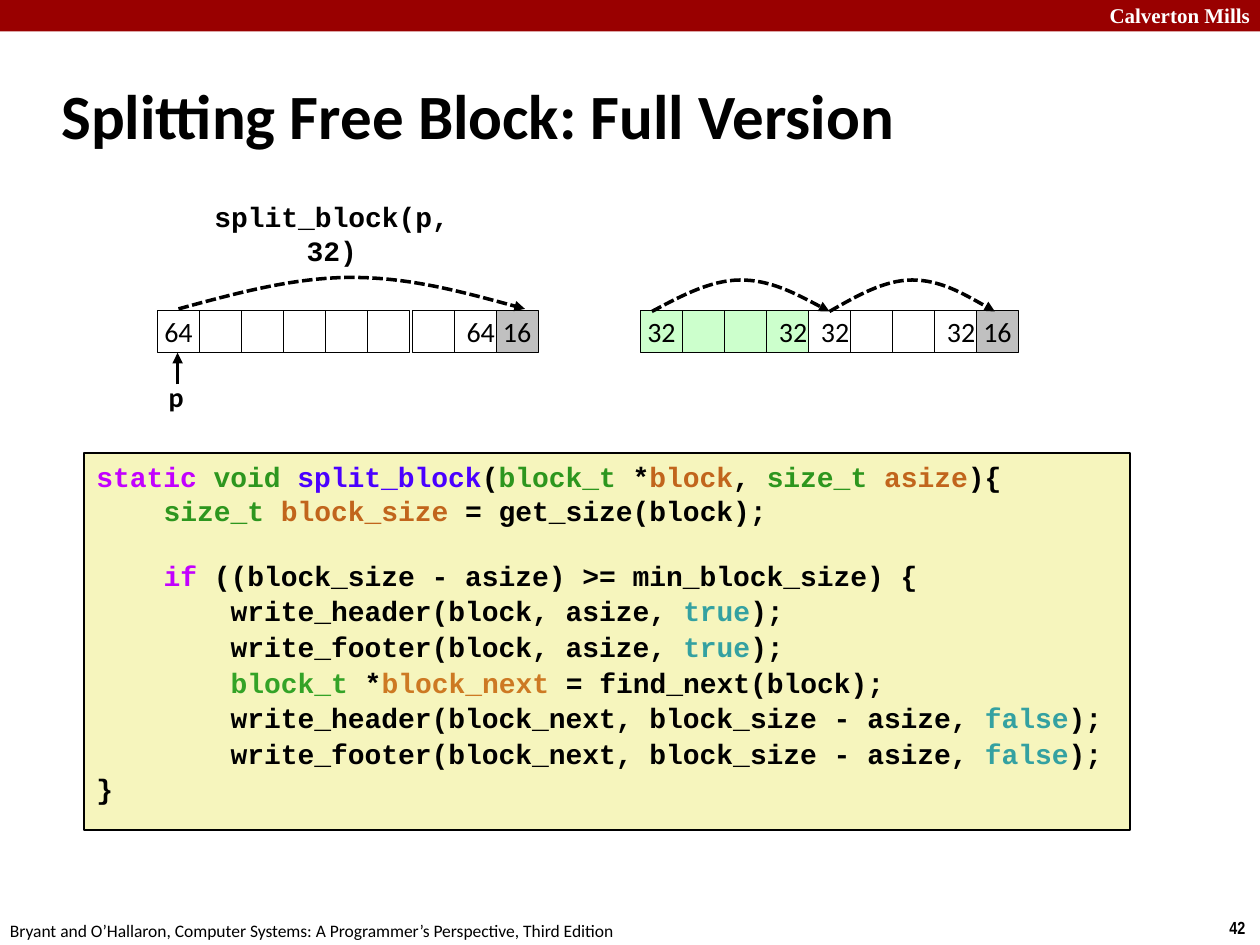
from lxml import etree
from pptx import Presentation
from pptx.dml.color import RGBColor
from pptx.enum import dml, shapes, text
from pptx.oxml.ns import qn
from pptx.util import Pt

# Content
COLORS = {
    "black": "000000", "white": "FFFFFF", "banner": "990000", "panel": "F6F5BD",
    "used": "CCFFCC", "next": "C0C0C0", "keyword": "C200FF", "type": "2D961E",
    "func": "4A00FF", "var": "C1651C", "const": "34A1A1",
    "type2": "34A327", "var2": "CD7923",
}
# Labels: text, box (left, top, width, height), font, size, bold, colour, align, wrap
LABELS = [
    ("Calverton Mills", (622, -2, 99.4, 21.6), "Times New Roman", 12, True, "white", "RIGHT", True),
    ("42", (695.5, 520.5, 24.5, 19.5), "Arial Narrow", 10, True, "black", "LEFT", False),
    ("Bryant and O’Hallaron, Computer Systems: A Programmer’s Perspective, Third Edition",
     (-1.4, 522, 366, 19.5), "Calibri", 10, False, "black", "LEFT", False),
    ("Splitting Free Block: Full Version", (28, 35.3, 598, 59.8),
     "Calibri", 36, True, "black", "LEFT", True),
    ("split_block(p, 32)", (98.6, 121, 182, 24.5), "Courier New", 16, True, "black", "CENTER", False),
    ("p", (89.3, 213, 23, 26.6), "Calibri", 16, True, "black", "LEFT", False),
]
# Memory rows: left edge, then cells as (text, fill, align)
EMPTY, USED = ("", "white", "CENTER"), ("", "used", "CENTER")
NEXT = ("16", "next", "CENTER")
ROWS = [
    (90, [("64", "white", "CENTER")] + [EMPTY] * 5),
    (235.5, [EMPTY, ("64", "white", "LEFT"), NEXT]),
    (366, [("32", "used", "CENTER"), USED, USED, ("32", "used", "LEFT"),
           ("32", "white", "LEFT"), EMPTY, EMPTY, ("32", "white", "LEFT"), NEXT]),
]
# Arcs: from x, to x, base y
ARCS = [(102, 300, 176.5), (372.5, 474, 178), (474, 568.5, 178)]
# Code lines: indent level, line spacing, blank lines before, runs of (text, colour)
CODE = [
    (0, 1.0, 0, [("static ", "keyword"), ("void ", "type"), ("split_block", "func"),
                 ("(", "black"), ("block_t", "type"), (" *", "black"), ("block", "var"),
                 (", ", "black"), ("size_t ", "type"), ("asize", "var"), ("){", "black")]),
    (1, 1.0, 0, [("size_t ", "type"), ("block_size", "var"), (" = get_size(block);", "black")]),
    (1, 1.0, 1, [("if", "keyword"), (" ((block_size - asize) >= min_block_size) {", "black")]),
    (2, 1.06, 0, [("write_header(block, asize, ", "black"), ("true", "const"), (");", "black")]),
    (2, 1.06, 0, [("write_footer(block, asize, ", "black"), ("true", "const"), (");", "black")]),
    (2, 1.06, 0, [("block_t", "type2"), (" *", "black"), ("block_next", "var2"),
                  (" = find_next(block);", "black")]),
    (2, 1.06, 0, [("write_header(block_next, block_size - asize, ", "black"),
                  ("false", "const"), (");", "black")]),
    (2, 1.06, 0, [("write_footer(block_next, block_size - asize, ", "black"),
                  ("false", "const"), (");", "black")]),
    (0, 1.06, 0, [("}", "black")]),
]
CELL, ROW_TOP, ARC_HEIGHT = 24, 177.2, 18
INDENT, BLANK_LINE = 38.4, 18.1


def color(name):
    return RGBColor.from_string(COLORS[name])


def add_run(p, content, font, size, bold, fill):
    r = p.add_run()
    r.text = content
    r.font.name, r.font.size, r.font.bold = font, Pt(size), bold
    r.font.color.rgb = color(fill)


def add_box(box, fill, line_width=None):
    sp = slide.shapes.add_shape(shapes.MSO_SHAPE.RECTANGLE, *map(Pt, box))
    sp.shadow.inherit = False
    sp.fill.solid()
    sp.fill.fore_color.rgb = color(fill)
    if line_width:
        sp.line.color.rgb = color("black")
        sp.line.width = Pt(line_width)
    else:
        sp.line.fill.background()
    return sp


def style_arrow(line):
    line.color.rgb = color("black")
    line.width = Pt(2)
    etree.SubElement(line._get_or_add_ln(), qn("a:tailEnd"), type="triangle")


def add_arc(x0, x1, base):
    top, mid = base - ARC_HEIGHT, base - ARC_HEIGHT / 2
    heights = [base, mid, top, top, top, mid, base]
    points = [(Pt(x0 + (x1 - x0) * i / 6), Pt(y)) for i, y in enumerate(heights)]
    builder = slide.shapes.build_freeform(*points[0])
    builder.add_line_segments(points[1:], close=False)
    sp = builder.convert_to_shape()
    # Turn every three segments into one cubic curve
    segments = list(sp._element.iter(qn("a:lnTo")))
    for start in range(0, len(segments), 3):
        curve = etree.Element(qn("a:cubicBezTo"))
        segments[start].addprevious(curve)
        for segment in segments[start:start + 3]:
            curve.append(segment[0])
            segment.getparent().remove(segment)
    sp.shadow.inherit = False
    sp.fill.background()
    sp.line.dash_style = dml.MSO_LINE.SQUARE_DOT
    style_arrow(sp.line)


prs = Presentation()
prs.slide_width, prs.slide_height = Pt(720), Pt(540)
slide = prs.slides.add_slide(prs.slide_layouts[6])

# Banner and labels
add_box((0, 0, 720, 18), "banner")
for content, box, font, size, bold, fill, align, wrap in LABELS:
    tf = slide.shapes.add_textbox(*map(Pt, box)).text_frame
    tf.word_wrap = wrap
    tf.vertical_anchor = text.MSO_ANCHOR.MIDDLE
    p = tf.paragraphs[0]
    p.alignment = text.PP_ALIGN[align]
    add_run(p, content, font, size, bold, fill)

# Memory rows
for left, cells in ROWS:
    for i, (content, fill, align) in enumerate(cells):
        sp = add_box((left + i * CELL, ROW_TOP, CELL, CELL), fill, 0.25)
        if content:
            tf = sp.text_frame
            tf.word_wrap = False
            tf.vertical_anchor = text.MSO_ANCHOR.MIDDLE
            p = tf.paragraphs[0]
            p.alignment = text.PP_ALIGN[align]
            add_run(p, content, "Calibri", 16, False, "black")

# Arcs and pointer
for arc in ARCS:
    add_arc(*arc)
pointer = slide.shapes.add_connector(
    shapes.MSO_CONNECTOR.STRAIGHT, Pt(101.5), Pt(219.6), Pt(101.5), Pt(201.6))
style_arrow(pointer.line)
etree.SubElement(pointer._element.spPr, qn("a:effectLst"))

# Code panel
panel = add_box((48, 259, 597.6, 215.3), "panel", 1)
tf = panel.text_frame
tf.word_wrap = True
tf.vertical_anchor = text.MSO_ANCHOR.TOP
for i, (level, spacing, blanks, runs) in enumerate(CODE):
    p = tf.add_paragraph() if i else tf.paragraphs[0]
    p.alignment = text.PP_ALIGN.LEFT
    p.line_spacing = spacing
    p.space_before = Pt(blanks * BLANK_LINE)
    p._p.get_or_add_pPr().set("marL", str(Pt(level * INDENT)))
    for content, fill in runs:
        add_run(p, content, "Courier New", 16, True, fill)

prs.save("out.pptx")
